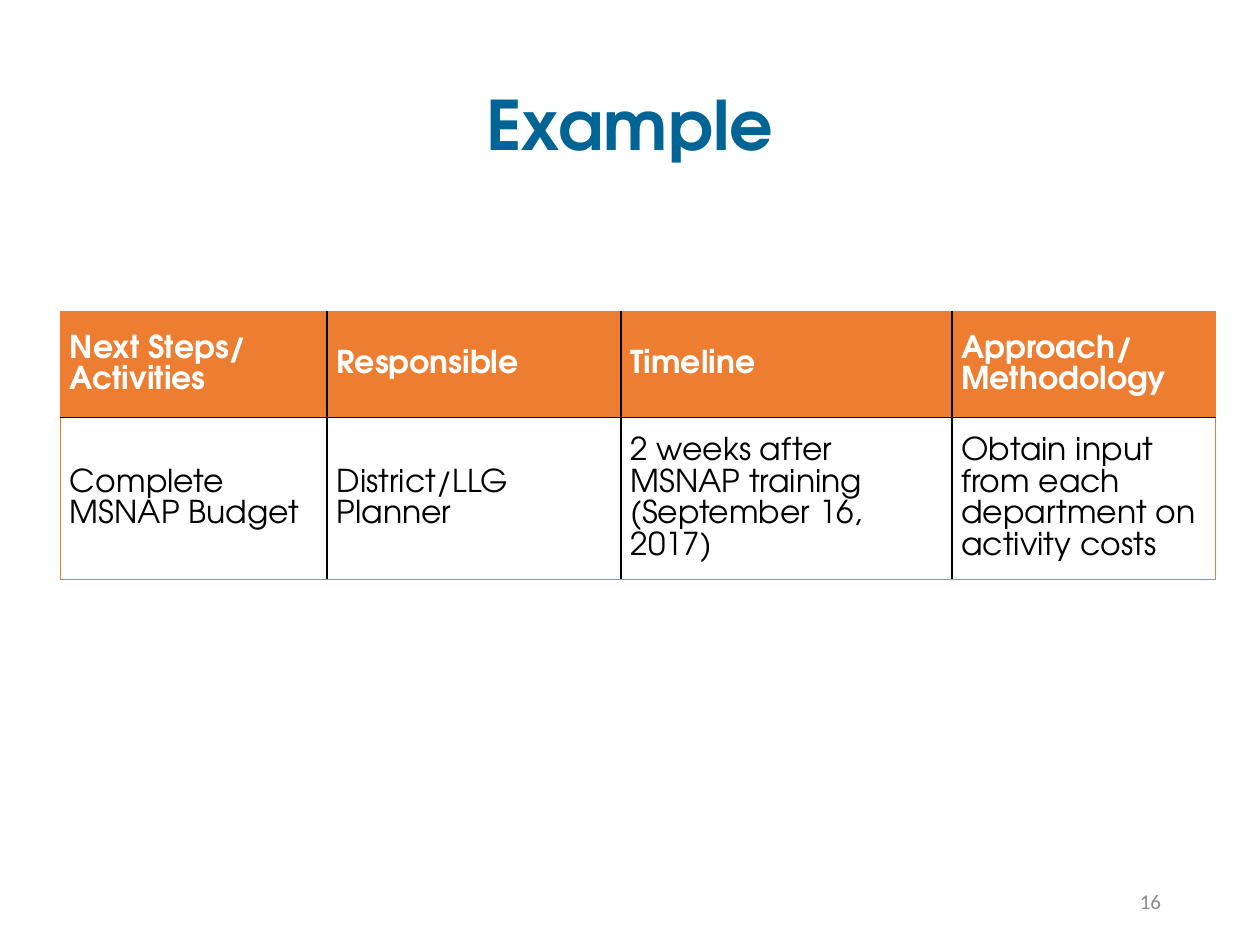
import pptx
import pptx.dml.color
import pptx.enum.text
import pptx.oxml
import pptx.oxml.ns
import pptx.util
from pptx.util import Pt

# Content
TITLE = "Example"
PAGE_NUMBER = "16"
ROWS = [
    ["Next Steps/ Activities", "Responsible", "Timeline", "Approach/ Methodology"],
    [
        "Complete MSNAP Budget",
        "District/LLG Planner",
        "2 weeks after MSNAP training\n(September 16, 2017)",
        "Obtain input from each department on activity costs",
    ],
]

# Lengths in points
SLIDE_SIZE = (720, 540)
TITLE_BOX = (49.5, 28.75, 621, 89.5)
NUMBER_BOX = (508.5, 500.5, 162, 28.75)
TABLE_ORIGIN = (34.5, 177.75)
COLUMN_WIDTHS = [152.5, 168, 189, 150.5]
ROW_HEIGHTS = [60.75, 80.75]
CELL_MARGIN = 5.4

THEME = {
    "heading_font": "TeX Gyre Adventor",
    "number_font": "Calibri",
    "title_size": 39,
    "table_size": 18,
    "number_size": 12,
    "title": "006595",
    "number": "8C8C8C",
    "accent": "ED7D31",
    "light": "FFFFFF",
    "dark": "000000",
}
ALIGN = pptx.enum.text.PP_ALIGN
MIDDLE = pptx.enum.text.MSO_ANCHOR.MIDDLE


def color(name):
    return pptx.dml.color.RGBColor.from_string(THEME[name])


def style(paragraph, font, size, color_name, bold=False, align=ALIGN.LEFT, spacing=1.0):
    paragraph.alignment = align
    paragraph.line_spacing = spacing
    paragraph.font.name = THEME[font]
    paragraph.font.size = Pt(THEME[size])
    paragraph.font.bold = bold
    paragraph.font.color.rgb = color(color_name)


def add_text(slide, box, text, **text_style):
    frame = slide.shapes.add_textbox(*map(Pt, box)).text_frame
    frame.word_wrap = True
    frame.vertical_anchor = MIDDLE
    frame.text = text
    style(frame.paragraphs[0], **text_style)


def set_borders(cell, outer_sides):
    """Draw thin accent lines on outer sides and black lines on inner ones."""
    properties = cell._tc.get_or_add_tcPr()
    for index, side in enumerate("LRTB"):
        name, width = ("accent", 0.5) if side in outer_sides else ("dark", 1)
        line = pptx.oxml.parse_xml(
            f'<a:ln{side} {pptx.oxml.ns.nsdecls("a")} w="{int(Pt(width))}">'
            f'<a:solidFill><a:srgbClr val="{THEME[name]}"/></a:solidFill></a:ln{side}>'
        )
        properties.insert(index, line)


def add_plan_table(slide):
    row_count, column_count = len(ROWS), len(COLUMN_WIDTHS)
    size = (sum(COLUMN_WIDTHS), sum(ROW_HEIGHTS))
    table = slide.shapes.add_table(
        row_count, column_count, *map(Pt, TABLE_ORIGIN + size)
    ).table
    for column, width in zip(table.columns, COLUMN_WIDTHS):
        column.width = Pt(width)
    for row, height in zip(table.rows, ROW_HEIGHTS):
        row.height = Pt(height)

    for row_index, texts in enumerate(ROWS):
        header = row_index == 0
        for column_index, text in enumerate(texts):
            cell = table.cell(row_index, column_index)
            cell.text = text
            cell.vertical_anchor = MIDDLE
            cell.margin_left = cell.margin_right = Pt(CELL_MARGIN)
            cell.margin_top = cell.margin_bottom = 0
            cell.fill.solid()
            cell.fill.fore_color.rgb = color("accent" if header else "light")
            for paragraph in cell.text_frame.paragraphs:
                style(paragraph, "heading_font", "table_size",
                      "light" if header else "dark", bold=header, spacing=1.07)
            edges = {
                "L": column_index == 0,
                "R": column_index == column_count - 1,
                "T": header,
                "B": row_index == row_count - 1,
            }
            set_borders(cell, [side for side, outer in edges.items() if outer])


def main():
    presentation = pptx.Presentation()
    presentation.slide_width, presentation.slide_height = map(Pt, SLIDE_SIZE)
    slide = presentation.slides.add_slide(presentation.slide_layouts[6])

    # Title and page number
    add_text(slide, TITLE_BOX, TITLE, font="heading_font", size="title_size",
             color_name="title", bold=True, align=ALIGN.CENTER, spacing=0.9)
    add_text(slide, NUMBER_BOX, PAGE_NUMBER, font="number_font", size="number_size",
             color_name="number", align=ALIGN.RIGHT)

    # Action plan
    add_plan_table(slide)
    presentation.save("out.pptx")


if __name__ == "__main__":
    main()
